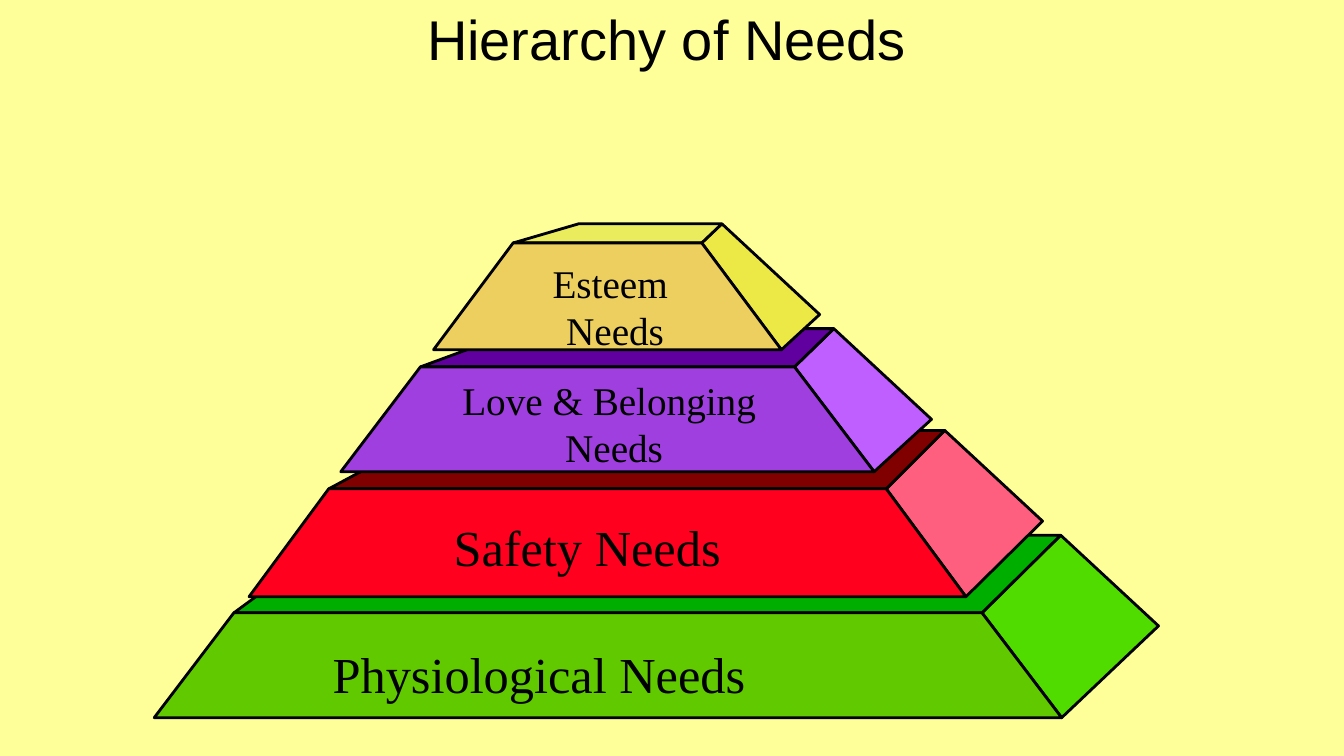
from pptx import Presentation
from pptx.dml.color import RGBColor
from pptx.enum.text import PP_ALIGN
from pptx.util import Inches, Pt

BLACK = RGBColor(0x00, 0x00, 0x00)
PALE_YELLOW = RGBColor(0xFF, 0xFF, 0x99)
GREEN = RGBColor(0x60, 0xC9, 0x00)
GREEN_TOP = RGBColor(0x00, 0xAE, 0x00)
GREEN_SIDE = RGBColor(0x51, 0xDC, 0x00)
RED = RGBColor(0xFF, 0x00, 0x1F)
RED_TOP = RGBColor(0x80, 0x00, 0x00)
RED_SIDE = RGBColor(0xFF, 0x5F, 0x7F)
PURPLE = RGBColor(0x9F, 0x3F, 0xDF)
PURPLE_TOP = RGBColor(0x5F, 0x00, 0x9F)
PURPLE_SIDE = RGBColor(0xBF, 0x5F, 0xFF)
GOLD = RGBColor(0xEC, 0xCF, 0x5E)
GOLD_TOP = RGBColor(0xEA, 0xEC, 0x5E)
GOLD_SIDE = RGBColor(0xEC, 0xE8, 0x46)

SLOPE = 0.79
SIDE_RUN, SIDE_DROP = 0.97, 0.9

# front box, depth (x, y), back-left corner x, colours front/top/side
TIERS = [
    ((1.53, 6.08, 9.0, 1.04), (0.78, 0.77), 3.37, (GREEN, GREEN_TOP, GREEN_SIDE)),
    ((2.47, 4.85, 7.11, 1.07), (0.58, 0.58), 4.34, (RED, RED_TOP, RED_SIDE)),
    ((3.38, 3.64, 5.29, 1.04), (0.39, 0.38), 5.2, (PURPLE, PURPLE_TOP, PURPLE_SIDE)),
    ((4.3, 2.41, 3.45, 1.06), (0.2, 0.19), 5.74, (GOLD, GOLD_TOP, GOLD_SIDE)),
]
LABELS = [
    ((5.09, 2.52, 2.02, 1.03), ["Esteem ", "Needs"], 28, PP_ALIGN.CENTER),
    ((4.47, 3.68, 3.24, 1.04), ["Love & Belonging ", "Needs"], 28, PP_ALIGN.CENTER),
    ((3.2, 6.33, 4.34, 0.7), ["Physiological Needs"], 36, PP_ALIGN.LEFT),
    ((2.76, 5.07, 6.13, 0.7), ["Safety Needs"], 36, PP_ALIGN.CENTER),
]


def add_face(s, points, color):
    """Draw one outlined face of a tier."""
    start, *rest = [(Inches(x), Inches(y)) for x, y in points]
    builder = s.shapes.build_freeform(*start, scale=1.0)
    builder.add_line_segments(rest, close=True)
    sp = builder.convert_to_shape()
    sp.shadow.inherit = False
    sp.fill.solid()
    sp.fill.fore_color.rgb = color
    sp.line.color.rgb = BLACK
    sp.line.width = Pt(2)


def add_tier(s, box, depth, back_x, colors):
    """Draw a pyramid tier as side, top and front faces around its front box."""
    x, y, w, h = box
    dx, dy = depth
    front, top, side = colors
    base_left, base_right = (x, y + h), (x + w, y + h)
    top_left, top_right = (x + SLOPE, y), (x + w - SLOPE, y)
    back_right = (top_right[0] + dx, y - dy)
    side_corner = (back_right[0] + SIDE_RUN, back_right[1] + SIDE_DROP)
    add_face(s, [base_right, top_right, back_right, side_corner], side)
    add_face(s, [top_left, top_right, back_right, (back_x, y - dy)], top)
    add_face(s, [top_left, top_right, base_right, base_left], front)


def add_label(s, box, lines, size, align, font="Times New Roman"):
    """Write lines of text in a box."""
    tf = s.shapes.add_textbox(*map(Inches, box)).text_frame
    tf.word_wrap = True
    tf.text = "\n".join(lines)
    for p in tf.paragraphs:
        p.alignment = align
        for r in p.runs:
            r.font.size = Pt(size)
            r.font.name = font
            r.font.color.rgb = BLACK


def add_needs_slide(prs):
    """Build the hierarchy of needs slide."""
    s = prs.slides.add_slide(prs.slide_layouts[6])
    s.background.fill.solid()
    s.background.fill.fore_color.rgb = PALE_YELLOW
    for tier in TIERS:
        add_tier(s, *tier)
    for label in LABELS:
        add_label(s, *label)
    add_label(s, (0, 0, 13.22, 0.76), ["Hierarchy of Needs"], 40,
              PP_ALIGN.CENTER, "Arial")


def main():
    """Create and save the presentation."""
    prs = Presentation()
    prs.slide_width, prs.slide_height = Inches(13.33), Inches(7.5)
    add_needs_slide(prs)
    prs.save("out.pptx")


if __name__ == "__main__":
    main()
